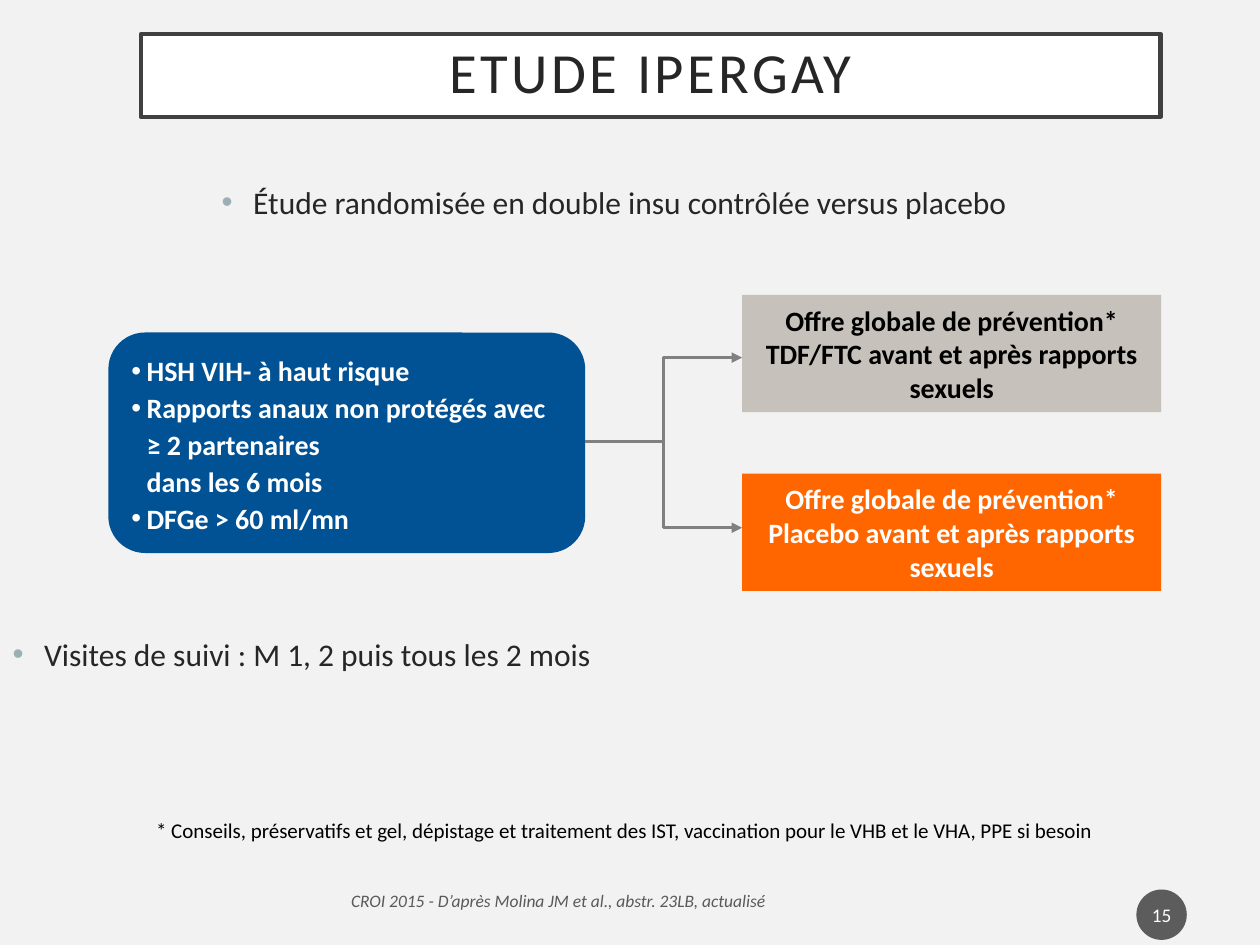
from lxml import etree
from pptx import Presentation
from pptx.dml.color import RGBColor
from pptx.enum.shapes import MSO_CONNECTOR, MSO_SHAPE
from pptx.enum.text import MSO_ANCHOR, MSO_AUTO_SIZE, PP_ALIGN
from pptx.oxml.ns import qn
from pptx.util import Pt

LEFT, CENTER, RIGHT = PP_ALIGN.LEFT, PP_ALIGN.CENTER, PP_ALIGN.RIGHT
TOP, MIDDLE = MSO_ANCHOR.TOP, MSO_ANCHOR.MIDDLE
NO_FIT = MSO_AUTO_SIZE.NONE
RECTANGLE, ROUNDED, OVAL = MSO_SHAPE.RECTANGLE, MSO_SHAPE.ROUNDED_RECTANGLE, MSO_SHAPE.OVAL
ELBOW = MSO_CONNECTOR.ELBOW
TWO_CONTENT = 3

COLORS = {
    "background": "F2F2F2", "white": "FFFFFF", "black": "000000",
    "text": "262626", "frame": "404040", "bullet": "9BAFB5",
    "population": "005294", "treatment": "C6C1BA", "placebo": "FF6600",
    "arrow": "808080", "source": "595959", "badge": "1D1D1D",
}


def color(name):
    return RGBColor.from_string(COLORS[name])


class SlideBuilder:
    font_name = "Calibri"

    def __init__(self, slide):
        self.slide = slide
        fill = slide.background.fill
        fill.solid()
        fill.fore_color.rgb = color("background")

    def place(self, shape, left, top, width, height):
        shape.left, shape.top = Pt(left), Pt(top)
        shape.width, shape.height = Pt(width), Pt(height)

    def bullet(self, para, indent, bullet_color):
        properties = para._p.get_or_add_pPr()
        properties.set("marL", str(Pt(indent)))
        properties.set("indent", str(-Pt(indent)))
        holder = etree.SubElement(properties, qn("a:buClr"))
        etree.SubElement(holder, qn("a:srgbClr"), val=COLORS[bullet_color])
        etree.SubElement(properties, qn("a:buFont"), typeface="Arial")
        etree.SubElement(properties, qn("a:buChar"), char="•")

    def fill_text(self, shape, lines, size, text_color, align=LEFT, anchor=TOP, bold=False,
                  italic=False, spacing=1.0, indent=0, bullet_color=None, margins=(7.2, 3.6)):
        frame = shape.text_frame
        frame.word_wrap = True
        frame.auto_size = NO_FIT
        frame.vertical_anchor = anchor
        frame.margin_left = frame.margin_right = Pt(margins[0])
        frame.margin_top = frame.margin_bottom = Pt(margins[1])
        for number, line in enumerate(lines):
            para = frame.add_paragraph() if number else frame.paragraphs[0]
            para.text = line
            if bullet_color:
                self.bullet(para, indent, bullet_color)
            para.alignment = align
            para.line_spacing = spacing
            para.space_before = para.space_after = Pt(0)
            font = para.font
            font.name, font.size = self.font_name, Pt(size)
            font.bold, font.italic = bold, italic
            font.color.rgb = color(text_color)

    def title(self, text, *position):
        shape = self.slide.shapes.title
        self.place(shape, *position)
        shape.fill.solid()
        shape.fill.fore_color.rgb = color("white")
        shape.line.color.rgb = color("frame")
        shape.line.width = Pt(2.5)
        self.fill_text(shape, [text], 32.4, "text", CENTER, MIDDLE, spacing=0.9,
                       margins=(14.4, 14.4))
        span = shape.text_frame.paragraphs[0].runs[0]
        span._r.get_or_add_rPr().set("spc", "200")

    def body(self, index, text, *position):
        shape = self.slide.placeholders[index]
        self.place(shape, *position)
        self.fill_text(shape, [text], 18, "text", indent=18, bullet_color="bullet")

    def box(self, kind, fill, *position):
        shape = self.slide.shapes.add_shape(kind, *map(Pt, position))
        shape.shadow.inherit = False
        shape.fill.solid()
        shape.fill.fore_color.rgb = color(fill)
        shape.line.fill.background()
        return shape

    def badge(self, text, *position):
        shape = self.box(OVAL, "badge", *position)
        solid = shape._element.spPr.find(qn("a:solidFill"))
        etree.SubElement(solid[0], qn("a:alpha"), val="70000")
        self.fill_text(shape, [text], 11, "white", CENTER, MIDDLE, margins=(1.44, 3.6))

    def label(self, text, position, size, text_color, **style):
        shape = self.slide.shapes.add_textbox(*map(Pt, position))
        self.fill_text(shape, [text], size, text_color, **style)

    def arrow(self, *points):
        connector = self.slide.shapes.add_connector(ELBOW, *map(Pt, points))
        connector.line.color.rgb = color("arrow")
        connector.line.width = Pt(1.5)
        properties = connector._element.spPr
        etree.SubElement(properties.find(qn("a:ln")), qn("a:tailEnd"), type="triangle")
        etree.SubElement(properties, qn("a:effectLst"))


def main():
    deck = Presentation()
    deck.slide_width, deck.slide_height = Pt(720), Pt(540)
    page = SlideBuilder(deck.slides.add_slide(deck.slide_layouts[TWO_CONTENT]))

    # Title and key points
    page.title("ETUDE IPERGAY", 80.6, 19.4, 582.5, 47.5)
    page.body(1, "Étude randomisée en double insu contrôlée versus placebo",
              119.5, 100.8, 600.5, 49.7)
    page.body(2, "Visites de suivi : M 1, 2 puis tous les 2 mois", 0, 359.3, 600.5, 88.6)

    # Study population
    population = page.box(ROUNDED, "population", 61.9, 190, 272.5, 126)
    page.fill_text(population, [
        "HSH VIH- à haut risque",
        "Rapports anaux non protégés avec ≥ 2 partenaires\vdans les 6 mois",
        "DFGe > 60 ml/mn",
    ], 16, "white", anchor=MIDDLE, bold=True, spacing=1.1, indent=8.7, bullet_color="white")

    # Study arms, each reached by an arrow
    arms = [
        ("TDF/FTC", "treatment", "black", 168.5, 204.4),
        ("Placebo", "placebo", "white", 270.7, 301.6),
    ]
    for drug, fill, text_color, top, arrow_end in arms:
        page.arrow(334.3, 252.4, 424.1, arrow_end)
        arm = page.box(RECTANGLE, fill, 424.1, top, 239.5, 67)
        page.fill_text(arm,
                       [f"Offre globale de prévention*\v{drug} avant et après rapports sexuels"],
                       16, text_color, CENTER, MIDDLE, bold=True)

    # Footnote, source and page number
    page.label("* Conseils, préservatifs et gel, dépistage et traitement des IST, "
               "vaccination pour le VHB et le VHA, PPE si besoin",
               (82.1, 463.7, 617.8, 21.8), 12, "black")
    page.label("CROI 2015 - D’après Molina JM et al., abstr. 23LB, actualisé",
               (87.8, 508.3, 356.5, 25.2), 10, "source", align=RIGHT, italic=True,
               margins=(7.2, 0))
    page.badge("15", 649.4, 508.3, 28.8, 28.8)

    deck.save("out.pptx")


if __name__ == "__main__":
    main()
